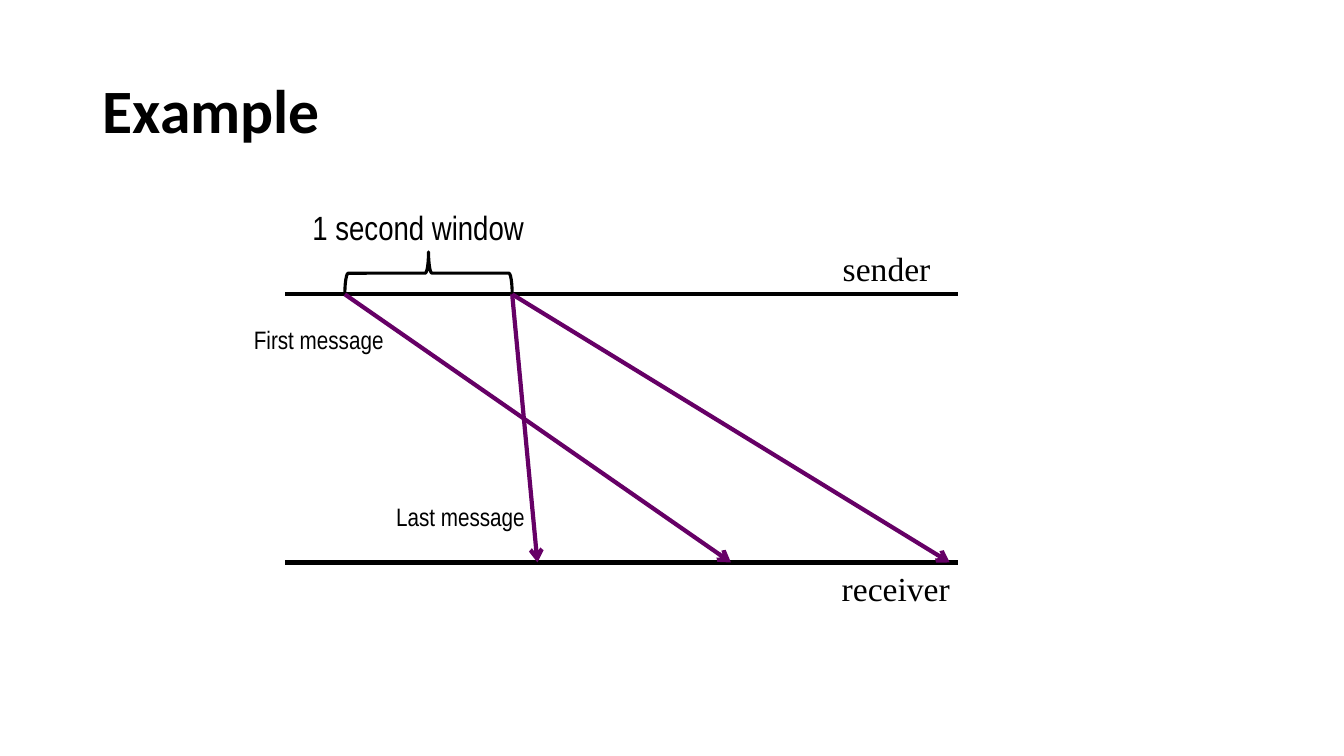
from dataclasses import dataclass

from lxml import etree
from pptx import Presentation
from pptx.dml.color import RGBColor
from pptx.enum import shapes, text
from pptx.oxml import ns
from pptx.shapes.shapetree import SlideShapes
from pptx.util import Inches, Pt


@dataclass(frozen=True)
class Theme:
    ink: RGBColor = RGBColor(0x00, 0x00, 0x00)
    message: RGBColor = RGBColor(0x66, 0x00, 0x66)
    title_font: str = "Calibri"
    note_font: str = "Arial Narrow"
    party_font: str = "Times New Roman"
    title_size: int = 44
    label_size: int = 24
    note_size: int = 18
    line_width: float = 3
    brace_width: float = 2.25


@dataclass(frozen=True)
class Label:
    wording: str
    left: float
    top: float
    width: float
    height: float
    font: str
    size: int


@dataclass(frozen=True)
class Message:
    sent_x: float
    received_x: float


THEME = Theme()
SENDER_Y, RECEIVER_Y = 2.92, 5.58
TIMELINE_START, TIMELINE_END = 2.83, 9.5
WINDOW_START, WINDOW_END = 3.42, 5.08
BRACE_DEPTH = 0.42

MESSAGES = [
    Message(WINDOW_START, 7.25),
    Message(WINDOW_END, 5.33),
    Message(WINDOW_END, 9.42),
]
LABELS = [
    Label("1 second window", 3, 2, 2.33, 0.51, THEME.note_font, THEME.label_size),
    Label("Last message", 3.83, 4.92, 1.49, 0.4, THEME.note_font, THEME.note_size),
    Label("First message", 2.42, 3.17, 1.5, 0.4, THEME.note_font, THEME.note_size),
    Label("sender", 8.26, 2.41, 1.09, 0.51, THEME.party_font, THEME.label_size),
    Label("receiver", 8.25, 5.58, 1.28, 0.51, THEME.party_font, THEME.label_size),
]


def add_label(canvas: SlideShapes, label: Label) -> text.MSO_ANCHOR | object:
    """Add a one-line text box and return its text frame."""
    box = canvas.add_textbox(
        Inches(label.left), Inches(label.top), Inches(label.width), Inches(label.height)
    )
    frame = box.text_frame
    frame.word_wrap = False
    frame.auto_size = text.MSO_AUTO_SIZE.SHAPE_TO_FIT_TEXT
    paragraph = frame.paragraphs[0]
    paragraph.text = label.wording
    paragraph.font.name = label.font
    paragraph.font.size = Pt(label.size)
    paragraph.font.color.rgb = THEME.ink
    return frame


def add_title(canvas: SlideShapes) -> None:
    frame = add_label(
        canvas,
        Label("Example", 0.92, 0.4, 11.5, 1.45, THEME.title_font, THEME.title_size),
    )
    frame.word_wrap = True
    frame.auto_size = text.MSO_AUTO_SIZE.NONE
    frame.vertical_anchor = text.MSO_ANCHOR.MIDDLE
    frame.paragraphs[0].line_spacing = 0.9
    frame.paragraphs[0].font.bold = True


def add_line(
    canvas: SlideShapes,
    start: tuple[float, float],
    end: tuple[float, float],
    color: RGBColor,
    arrow: bool = False,
) -> None:
    connector = canvas.add_connector(
        shapes.MSO_CONNECTOR.STRAIGHT, *map(Inches, start + end)
    )
    connector.line.color.rgb = color
    connector.line.width = Pt(THEME.line_width)
    if arrow:
        outline = connector.line._get_or_add_ln()
        etree.SubElement(outline, ns.qn("a:tailEnd"), type="arrow")
    etree.SubElement(connector._element.spPr, ns.qn("a:effectLst"))


def add_window_brace(canvas: SlideShapes) -> None:
    """Turn a left brace a quarter so that it spans the window on the sender line."""
    span = WINDOW_END - WINDOW_START
    center_x = (WINDOW_START + WINDOW_END) / 2
    center_y = SENDER_Y - BRACE_DEPTH / 2
    brace = canvas.add_shape(
        shapes.MSO_SHAPE.LEFT_BRACE,
        Inches(center_x - BRACE_DEPTH / 2),
        Inches(center_y - span / 2),
        Inches(BRACE_DEPTH),
        Inches(span),
    )
    brace.rotation = 90
    brace.adjustments[0] = 0.08
    brace.adjustments[1] = 0.5
    brace.shadow.inherit = False
    brace.fill.background()
    brace.line.color.rgb = THEME.ink
    brace.line.width = Pt(THEME.brace_width)


def main() -> None:
    deck = Presentation()
    deck.slide_width, deck.slide_height = Inches(13.33), Inches(7.5)
    canvas = deck.slides.add_slide(deck.slide_layouts[6]).shapes

    add_title(canvas)
    for y in (SENDER_Y, RECEIVER_Y):
        add_line(canvas, (TIMELINE_START, y), (TIMELINE_END, y), THEME.ink)
    add_window_brace(canvas)
    for message in MESSAGES:
        add_line(
            canvas,
            (message.sent_x, SENDER_Y),
            (message.received_x, RECEIVER_Y),
            THEME.message,
            arrow=True,
        )
    for label in LABELS:
        add_label(canvas, label)

    deck.save("out.pptx")


if __name__ == "__main__":
    main()
